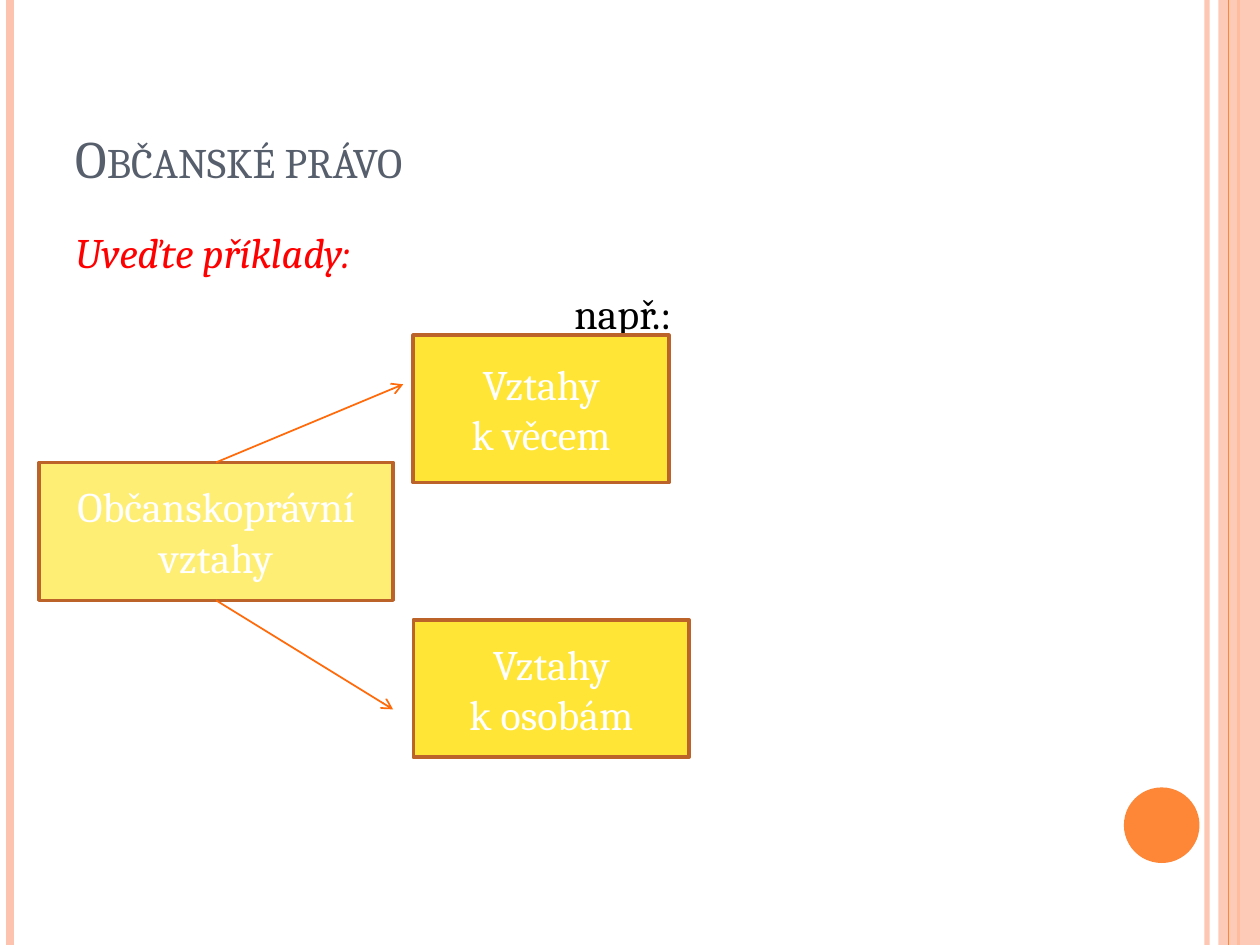
from lxml import etree
from pptx import Presentation
from pptx import util as u
from pptx.dml.color import RGBColor
from pptx.enum import shapes, text
from pptx.oxml.ns import qn

THEME = {
    "font": "Cambria",
    "title_size": 30, "text_size": 24,
    "slate": "575F6D", "red": "FF0000", "black": "000000", "white": "FFFFFF",
    "peach": "FEC3AE", "orange": "FE8637", "arrow": "FF6B0A",
    "border": "BC6329", "pale": "FFEE74", "yellow": "FFE636",
}

# Positions are percentages of the slide's width and height.
WIDTH, HEIGHT = u.Inches(10), u.Inches(7.5)

TITLE = "Občanské právo"
TITLE_AREA = (5, 4, 81.7, 16.67)
PROMPT = "Uveďte příklady:"
EXAMPLE = "např.:"
BODY_AREA = (5, 23.33, 81.7, 71.07)
EXAMPLE_INDENT = 39.6

# x, colour, width in points, opacity
RULES_BEHIND = [(95.8, "peach", 3, 93), (0.8, "peach", 4.5, 100), (98.3, "orange", 1.5, 100)]
RULES_FRONT = [(97.5, "orange", 0.75, 100)]
BAND = (96.7, 0, 3.3, 100)
DISC = (89.2, 83.33, 6, 8)

BOXES = {
    "relations": (["Občanskoprávní", "vztahy"], (3.1, 48.93, 28.1, 14.6), "pale"),
    "things": (["Vztahy", "k věcem"], (32.8, 35.47, 20.3, 15.6), "yellow"),
    "persons": (["Vztahy", "k osobám"], (32.8, 65.6, 21.9, 14.53), "yellow"),
}
# side of the relations box (0 top, 2 bottom), arrow tip
ARROWS = [(0, (32, 40.67)), (2, (31.2, 75.07))]


def across(share):
    return u.Emu(round(WIDTH * share / 100))


def down(share):
    return u.Emu(round(HEIGHT * share / 100))


def place(area):
    left, top, width, height = area
    return across(left), down(top), across(width), down(height)


def colour(name):
    return RGBColor.from_string(THEME[name])


def set_opacity(fill_element, percent):
    if percent < 100:
        srgb = next(fill_element.iter(qn("a:srgbClr")))
        etree.SubElement(srgb, qn("a:alpha")).set("val", str(percent * 1000))


def write(para, words, ink="white", size="text_size", italic=False, small_caps=False,
          align=None, before=0, indent=0):
    para.alignment = align
    para.space_before = u.Pt(before)
    if indent:
        para._p.get_or_add_pPr().set("marL", str(across(indent)))
    span = para.add_run()
    span.text = words
    span.font.name = THEME["font"]
    span.font.size = u.Pt(THEME[size])
    span.font.italic = italic
    span.font.color.rgb = colour(ink)
    if small_caps:
        span.font._element.set("cap", "small")


def add_frame(page, area, anchor):
    frame = page.shapes.add_textbox(*place(area)).text_frame
    frame.word_wrap = True
    frame.vertical_anchor = anchor
    return frame


def add_filled(page, kind, area, fill, opacity=100, border=None):
    shape = page.shapes.add_shape(kind, *place(area))
    shape.shadow.inherit = False
    shape.fill.solid()
    shape.fill.fore_color.rgb = colour(fill)
    set_opacity(shape._element.spPr, opacity)
    if border:
        shape.line.color.rgb = colour(border)
        shape.line.width = u.Pt(2)
    else:
        shape.line.fill.background()
    return shape


def add_line(page, start, end, ink, width, opacity=100):
    line = page.shapes.add_connector(shapes.MSO_CONNECTOR.STRAIGHT, across(start[0]),
                                     down(start[1]), across(end[0]), down(end[1]))
    line.line.color.rgb = colour(ink)
    line.line.width = u.Pt(width)
    set_opacity(line._element.spPr, opacity)
    etree.SubElement(line._element.spPr, qn("a:effectLst"))
    return line


def add_rules(page, rules):
    for x, ink, width, opacity in rules:
        add_line(page, (x, 0), (x, 100), ink, width, opacity)


def add_decoration(page):
    add_rules(page, RULES_BEHIND)
    add_filled(page, shapes.MSO_SHAPE.RECTANGLE, BAND, "peach", opacity=87)
    add_rules(page, RULES_FRONT)
    add_filled(page, shapes.MSO_SHAPE.OVAL, DISC, "orange")


def add_headings(page):
    title = add_frame(page, TITLE_AREA, text.MSO_ANCHOR.BOTTOM)
    write(title.paragraphs[0], TITLE, ink="slate", size="title_size", small_caps=True)
    body = add_frame(page, BODY_AREA, text.MSO_ANCHOR.TOP)
    write(body.paragraphs[0], PROMPT, ink="red", italic=True, before=6)
    write(body.add_paragraph(), EXAMPLE, ink="black", before=6, indent=EXAMPLE_INDENT)


def add_box(page, lines, area, fill):
    box = add_filled(page, shapes.MSO_SHAPE.RECTANGLE, area, fill, border="border")
    frame = box.text_frame
    frame.word_wrap = True
    frame.vertical_anchor = text.MSO_ANCHOR.MIDDLE
    for number, words in enumerate(lines):
        para = frame.add_paragraph() if number else frame.paragraphs[0]
        write(para, words, align=text.PP_ALIGN.CENTER)
    return box


def add_diagram(page):
    boxes = {name: add_box(page, *details) for name, details in BOXES.items()}
    for side, tip in ARROWS:
        arrow = add_line(page, tip, tip, "arrow", 1)
        arrow.begin_connect(boxes["relations"], side)
        etree.SubElement(arrow.line._get_or_add_ln(), qn("a:tailEnd")).set("type", "arrow")


def main():
    deck = Presentation()
    deck.slide_width, deck.slide_height = WIDTH, HEIGHT
    page = deck.slides.add_slide(deck.slide_layouts[6])
    add_decoration(page)
    add_headings(page)
    add_diagram(page)
    deck.save("out.pptx")


if __name__ == "__main__":
    main()
